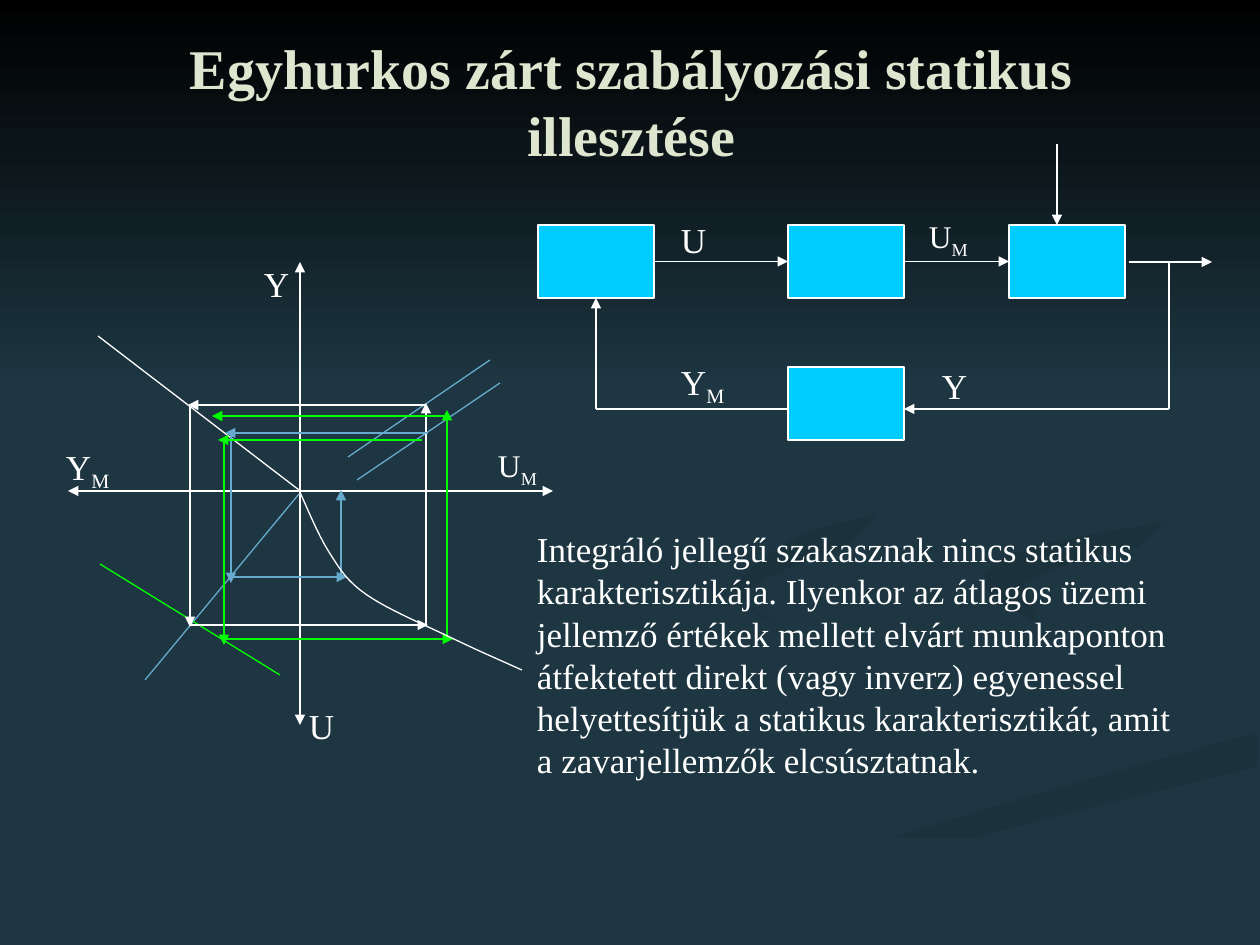
from dataclasses import dataclass

from lxml.etree import SubElement
from pptx import Presentation
from pptx.dml.color import RGBColor
from pptx.enum.shapes import MSO_CONNECTOR, MSO_SHAPE
from pptx.enum.text import MSO_ANCHOR, PP_ALIGN
from pptx.oxml.ns import qn
from pptx.util import Emu, Pt


@dataclass(frozen=True)
class Theme:
    font: str = "Times New Roman"
    background: str = "1D3641"
    shade: str = "1B323C"
    faint: str = "1C343E"
    black: str = "000000"
    title: str = "DFE6D0"
    white: str = "FFFFFF"
    block: str = "00CCFF"
    blue: str = "66AACD"
    green: str = "00FF00"
    title_size: int = 32
    text_size: int = 20
    small_size: int = 18
    line_width: float = 0.75


THEME = Theme()
TOP, LEFT, BOTTOM, RIGHT = range(4)

# Each ribbon: first colour, last colour, clockwise angle, one edge, the edge back
RIBBONS = [
    (THEME.background, THEME.faint, 0,
     [(718, 595), (979, 697), (881, 767), (577, 849), (378, 944)],
     [(455, 944), (670, 849), (969, 767), (979, 697)]),
    (THEME.shade, THEME.background, 90,
     [(634, 944), (877, 843), (1257, 732)],
     [(1257, 767), (947, 847), (719, 944)]),
    (THEME.shade, THEME.background, 45,
     [(1257, 507), (1034, 547), (984, 585), (1041, 625)],
     [(1023, 582), (1106, 553), (1257, 529)]),
    (THEME.shade, THEME.background, 45,
     [(960, 294), (1100, 377), (1113, 466), (861, 542), (747, 592), (784, 630)],
     [(728, 590), (818, 529), (1073, 471), (1104, 386), (960, 294)]),
]


def px(value):
    return Emu(round(value * 914400 / 126))


def rgb(color):
    return RGBColor.from_string(color)


def smooth(points, steps=8):
    """Return a Catmull-Rom curve through the points."""
    padded = [points[0], *points, points[-1]]
    curve = [points[0]]
    for a, b, c, d in zip(padded, padded[1:], padded[2:], padded[3:]):
        for step in range(1, steps + 1):
            t = step / steps
            curve.append(tuple(
                q + t / 2 * (r - p + t * (2*p - 5*q + 4*r - s + t * (3*q - p - 3*r + s)))
                for p, q, r, s in zip(a, b, c, d)))
    return curve


def add_outline(page, points, close):
    points = [(px(x), px(y)) for x, y in points]
    builder = page.shapes.build_freeform(*points[0])
    builder.add_line_segments(points[1:], close=close)
    shape = builder.convert_to_shape()
    shape.shadow.inherit = False
    return shape


def set_gradient(shape, first, last, angle):
    shape.line.fill.background()
    shape.fill.gradient()
    shape.fill.gradient_angle = -angle % 360
    for stop, color in zip(shape.fill.gradient_stops, (first, last)):
        stop.color.rgb = rgb(color)


def add_line(page, box, ends, color=THEME.white, head=False, tail=False):
    """Draw a line between ends (x1, y1, x2, y2) measured from the box corner."""
    x, y = box[:2]
    x1, y1, x2, y2 = ends
    line = page.shapes.add_connector(
        MSO_CONNECTOR.STRAIGHT, px(x + x1), px(y + y1), px(x + x2), px(y + y2))
    line.line.color.rgb = rgb(color)
    line.line.width = Pt(THEME.line_width)
    for tag, wanted in (("a:headEnd", head), ("a:tailEnd", tail)):
        if wanted:
            SubElement(line.line._get_or_add_ln(), qn(tag), type="triangle")
    SubElement(line._element.spPr, qn("a:effectLst"))
    return line


def add_text(page, box, text, size, color=THEME.white, subscript="", inset=0, wrap=True):
    frame = page.shapes.add_textbox(*map(px, box)).text_frame
    frame.word_wrap = wrap
    frame.margin_left = frame.margin_right = px(inset)
    frame.margin_top = frame.margin_bottom = 0
    para = frame.paragraphs[0]
    para.text = text
    if subscript:
        span = para.add_run()
        span.text = subscript
        span._r.get_or_add_rPr().set("baseline", "-25000")
    for span in para.runs:
        span.font.name = THEME.font
        span.font.size = Pt(size)
        span.font.color.rgb = rgb(color)
    return frame


def add_labels(page, box, labels):
    for x, y, text, subscript, size in labels:
        add_text(page, (box[0] + x, box[1] + y, 56 if subscript else 35, 42),
                 text, size, subscript=subscript, inset=2, wrap=False)


def add_backdrop(page, box):
    page.background.fill.solid()
    page.background.fill.fore_color.rgb = rgb(THEME.background)
    for first, last, angle, edge, edge_back in RIBBONS:
        ribbon = add_outline(page, smooth(edge) + smooth(edge_back), close=True)
        set_gradient(ribbon, first, last, angle)
    sky = page.shapes.add_shape(MSO_SHAPE.RECTANGLE, *map(px, box))
    sky.shadow.inherit = False
    set_gradient(sky, THEME.black, THEME.background, 90)


def add_title(page, box):
    frame = add_text(page, box, "Egyhurkos zárt szabályozási statikus illesztése",
                     THEME.title_size, THEME.title, inset=12)
    frame.vertical_anchor = MSO_ANCHOR.MIDDLE
    frame.paragraphs[0].alignment = PP_ALIGN.CENTER
    frame.paragraphs[0].runs[0].font.bold = True


def add_control_loop(page, box):
    """Three blocks in a row with a feedback block below them."""
    blocks = []
    for x, y in ((0, 81), (250, 81), (471, 81), (250, 223)):
        block = page.shapes.add_shape(
            MSO_SHAPE.RECTANGLE, px(box[0] + x), px(box[1] + y), px(116), px(73))
        block.shadow.inherit = False
        block.fill.solid()
        block.fill.fore_color.rgb = rgb(THEME.block)
        block.line.color.rgb = rgb(THEME.white)
        block.line.width = Pt(THEME.line_width)
        blocks.append(block)

    row = blocks[:3]
    for source, target in zip(row, row[1:]):
        arrow = add_line(page, box, (0, 0, 0, 0), tail=True)
        arrow.begin_connect(source, RIGHT)
        arrow.end_connect(target, LEFT)
    feedback = add_line(page, box, (58, 265, 58, 154), tail=True)
    feedback.end_connect(row[0], BOTTOM)
    for ends in ((591, 118, 674, 118), (631, 265, 366, 265), (519, 0, 519, 81)):
        add_line(page, box, ends, tail=True)
    for ends in ((58, 265, 250, 265), (631, 265, 631, 118)):
        add_line(page, box, ends)
    add_labels(page, box, [
        (141, 74, "U", "", THEME.text_size), (389, 73, "U", "M", THEME.small_size),
        (141, 216, "Y", "M", THEME.text_size), (402, 220, "Y", "", THEME.text_size)])


def add_cycle(page, box, color, frame, top_start, rise_end, overshoot):
    """Draw four arrows along the frame, each running past its corner."""
    left, top, right, bottom = frame
    for ends in ((top_start, top, left - overshoot, top),
                 (left, top, left, bottom + overshoot),
                 (left, bottom, right + overshoot, bottom),
                 (right, bottom, right, rise_end)):
        add_line(page, box, ends, color, tail=True)


def add_characteristics(page, box):
    """Four-quadrant static characteristics with three working cycles."""
    width, height = box[2:]
    for axis in ((232, height, 232, 0), (0, 229, width, 229)):
        add_line(page, box, axis, head=True, tail=True)

    for color, ends in ((THEME.white, (30, 74, 231, 228)),
                        (THEME.blue, (231, 232, 77, 418)),
                        (THEME.blue, (422, 98, 280, 195)),
                        (THEME.blue, (432, 121, 289, 218)),
                        (THEME.green, (32, 302, 212, 413))):
        add_line(page, box, ends, color)

    add_cycle(page, box, THEME.white, (122, 143, 358, 363), 358, 141, 2)
    add_cycle(page, box, THEME.blue, (163, 171, 273, 315), 360, 228, 6)
    add_cycle(page, box, THEME.green, (156, 178, 379, 377), 354, 148, 6)
    add_line(page, box, (382, 154, 144, 154), THEME.green, tail=True)

    points = smooth([(231, 228), (261, 290), (299, 333), (386, 377), (454, 408)])
    curve = add_outline(page, [(box[0] + x, box[1] + y) for x, y in points], close=False)
    curve.fill.background()
    curve.line.color.rgb = rgb(THEME.white)
    curve.line.width = Pt(THEME.line_width)
    add_labels(page, box, [
        (194, 0, "Y", "", THEME.text_size), (428, 184, "U", "M", THEME.small_size),
        (239, 442, "U", "", THEME.text_size), (-4, 183, "Y", "M", THEME.text_size)])


def add_explanation(page, box):
    add_text(page, box, "Integráló jellegű szakasznak nincs statikus karakterisztikája. "
             "Ilyenkor az átlagos üzemi jellemző értékek mellett elvárt munkaponton "
             "átfektetett direkt (vagy inverz) egyenessel helyettesítjük a statikus "
             "karakterisztikát, amit a zavarjellemzők elcsúsztatnak.", THEME.text_size)


def main():
    deck = Presentation()
    deck.slide_width, deck.slide_height = px(1260), px(945)
    page = deck.slides.add_slide(deck.slide_layouts[6])
    add_backdrop(page, (0, 0, 1260, 388))
    add_title(page, (94, 33, 1075, 136))
    add_control_loop(page, (538, 144, 674, 296))
    add_characteristics(page, (68, 262, 485, 463))
    add_explanation(page, (537, 528, 651, 252))
    deck.save("out.pptx")


if __name__ == "__main__":
    main()
